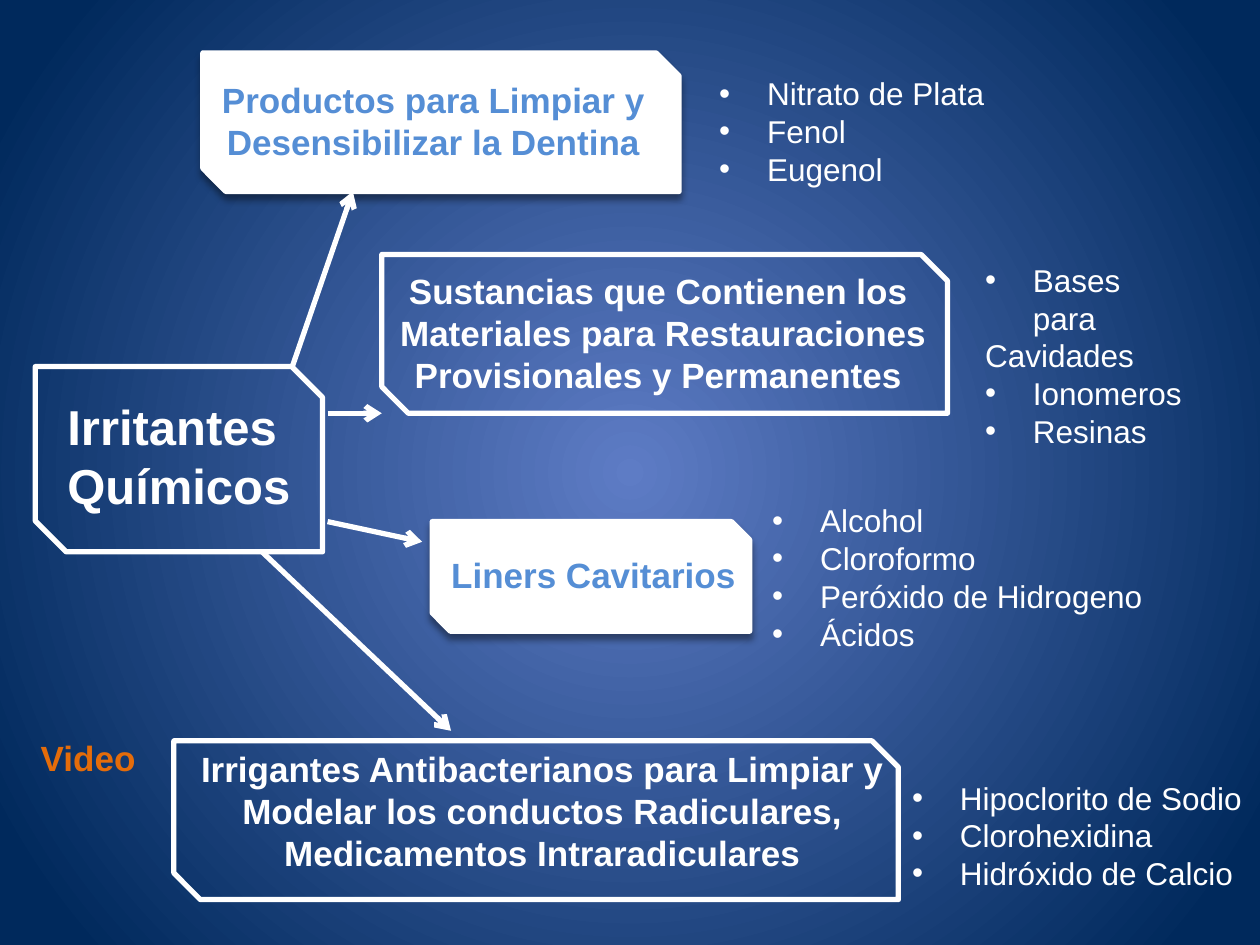
from lxml import etree
from pptx import Presentation
from pptx.dml.color import RGBColor
from pptx.enum.shapes import MSO_CONNECTOR, MSO_SHAPE
from pptx.enum.text import MSO_AUTO_SIZE, PP_ALIGN
from pptx.oxml.ns import qn
from pptx.util import Inches, Pt

SNIP = MSO_SHAPE.SNIP_2_DIAG_RECTANGLE
STRAIGHT = MSO_CONNECTOR.STRAIGHT
CENTER, LEFT = PP_ALIGN.CENTER, PP_ALIGN.LEFT
FIT_SHAPE = MSO_AUTO_SIZE.SHAPE_TO_FIT_TEXT

WHITE = RGBColor(0xFF, 0xFF, 0xFF)
BLUE = RGBColor(0x55, 0x8E, 0xD5)
ORANGE = RGBColor(0xE4, 0x6C, 0x0A)
GLOW = RGBColor(0x5E, 0x7C, 0xC5)
NAVY = RGBColor(0x00, 0x29, 0x5C)
FONT = "Arial"
INDENT = Inches(0.38)

# Each branch: frame box, filled, label box, label lines, list box, list items
# An item paired with False has no bullet
BRANCHES = [
    ((1.61, 0.42, 3.78, 1.1), True, (1.64, 0.57, 3.6, 0.77),
     ["Productos para Limpiar y ", "Desensibilizar la Dentina"],
     (5.61, 0.54, 2.31, 1.01),
     [("Nitrato de Plata", True), ("Fenol", True), ("Eugenol", True)]),
    ((3.03, 2.02, 4.49, 1.26), False, (2.98, 2.09, 4.49, 1.11),
     ["Sustancias que Contienen los", " Materiales para Restauraciones ",
      "Provisionales y Permanentes"],
     (7.72, 2.02, 1.84, 1.31),
     [("Bases para", True), ("Cavidades", False), ("Ionomeros", True),
      ("Resinas", True)]),
    ((3.43, 4.14, 2.52, 0.87), True, (3.47, 4.34, 2.48, 0.44),
     ["Liners Cavitarios"],
     (6.03, 3.93, 3.15, 1.31),
     [("Alcohol", True), ("Cloroformo", True),
      ("Peróxido de Hidrogeno", True), ("Ácidos", True)]),
    ((1.38, 5.88, 5.75, 1.26), False, (1.47, 5.88, 5.67, 1.11),
     ["Irrigantes Antibacterianos para Limpiar y",
      " Modelar los conductos Radiculares, ",
      "Medicamentos Intraradiculares"],
     (7.14, 6.13, 2.82, 1.01),
     [("Hipoclorito de Sodio", True), ("Clorohexidina", True),
      ("Hidróxido de Calcio", True)]),
]

ARROWS = [
    ((2.32, 2.91), (2.8, 1.52)),
    ((2.6, 3.28), (3.03, 3.28)),
    ((2.6, 4.14), (3.35, 4.3)),
    ((2.08, 4.38), (3.58, 5.8)),
]


def inches(values):
    return [Inches(v) for v in values]


def add_child(parent, tag, **attrs):
    return etree.SubElement(parent, qn(tag), attrs)


def set_background(slide):
    fill = slide.background.fill
    fill.gradient()
    for stop, color, position in zip(fill.gradient_stops, (GLOW, NAVY), (0, 0.92)):
        stop.color.rgb = color
        stop.position = position
    # Radial gradient from the centre
    grad = next(slide.element.iter(qn("a:gradFill")))
    grad.remove(grad.find(qn("a:lin")))
    radial = add_child(grad, "a:path", path="circle")
    add_child(radial, "a:fillToRect", l="50000", t="50000", r="50000", b="50000")


def add_frame(slide, box, filled):
    sp = slide.shapes.add_shape(SNIP, *inches(box))
    sp.shadow.inherit = False
    sp.line.color.rgb = WHITE
    sp.line.width = Pt(3)
    if not filled:
        sp.fill.background()
        return
    sp.fill.solid()
    sp.fill.fore_color.rgb = WHITE
    effects = sp.element.spPr.find(qn("a:effectLst"))
    shadow = add_child(effects, "a:outerShdw", blurRad=str(Pt(4)), dist=str(Pt(3)),
                       dir="5400000", rotWithShape="0")
    black = add_child(shadow, "a:srgbClr", val="000000")
    add_child(black, "a:alpha", val="40000")


def add_text(slide, box, lines, size, color, bold=True, align=CENTER, wrap=False):
    tf = slide.shapes.add_textbox(*inches(box)).text_frame
    tf.word_wrap = wrap
    tf.auto_size = FIT_SHAPE
    for i, line in enumerate(lines):
        p = tf.add_paragraph() if i else tf.paragraphs[0]
        p.alignment = align
        r = p.add_run()
        r.text = line
        r.font.name = FONT
        r.font.size = Pt(size)
        r.font.bold = bold
        r.font.color.rgb = color
    return tf


def add_list(slide, box, items):
    tf = add_text(slide, box, [text for text, _ in items], 18, WHITE,
                  bold=False, align=LEFT)
    for p, (_, bulleted) in zip(tf.paragraphs, items):
        if bulleted:
            pPr = p._p.get_or_add_pPr()
            pPr.set("marL", str(INDENT))
            pPr.set("indent", str(-INDENT))
            add_child(pPr, "a:buFont", typeface=FONT)
            add_child(pPr, "a:buChar", char="•")


def add_arrow(slide, start, end):
    line = slide.shapes.add_connector(STRAIGHT, *inches(start + end))
    line.line.color.rgb = WHITE
    line.line.width = Pt(3)
    add_child(line.line._get_or_add_ln(), "a:tailEnd", type="arrow")
    add_child(line._element.spPr, "a:effectLst")


def add_branch(slide, frame, filled, label_box, label, list_box, items):
    add_frame(slide, frame, filled)
    add_text(slide, label_box, label, 20, BLUE if filled else WHITE)
    add_list(slide, list_box, items)


def main():
    prs = Presentation()
    prs.slide_width, prs.slide_height = Inches(10), Inches(7.5)
    slide = prs.slides.add_slide(prs.slide_layouts[6])
    set_background(slide)

    # Central topic
    add_frame(slide, (0.28, 2.91, 2.28, 1.47), False)
    add_text(slide, (0.28, 3.1, 2.28, 1.04), ["Irritantes ", "Químicos"],
             28, WHITE, wrap=True)

    # Branches with their lists
    for branch in BRANCHES:
        add_branch(slide, *branch)

    # Arrows from the topic to the branches
    for start, end in ARROWS:
        add_arrow(slide, start, end)

    # Video label
    add_text(slide, (0.22, 5.8, 0.96, 0.44), ["Video"], 20, ORANGE)

    prs.save("out.pptx")


if __name__ == "__main__":
    main()
